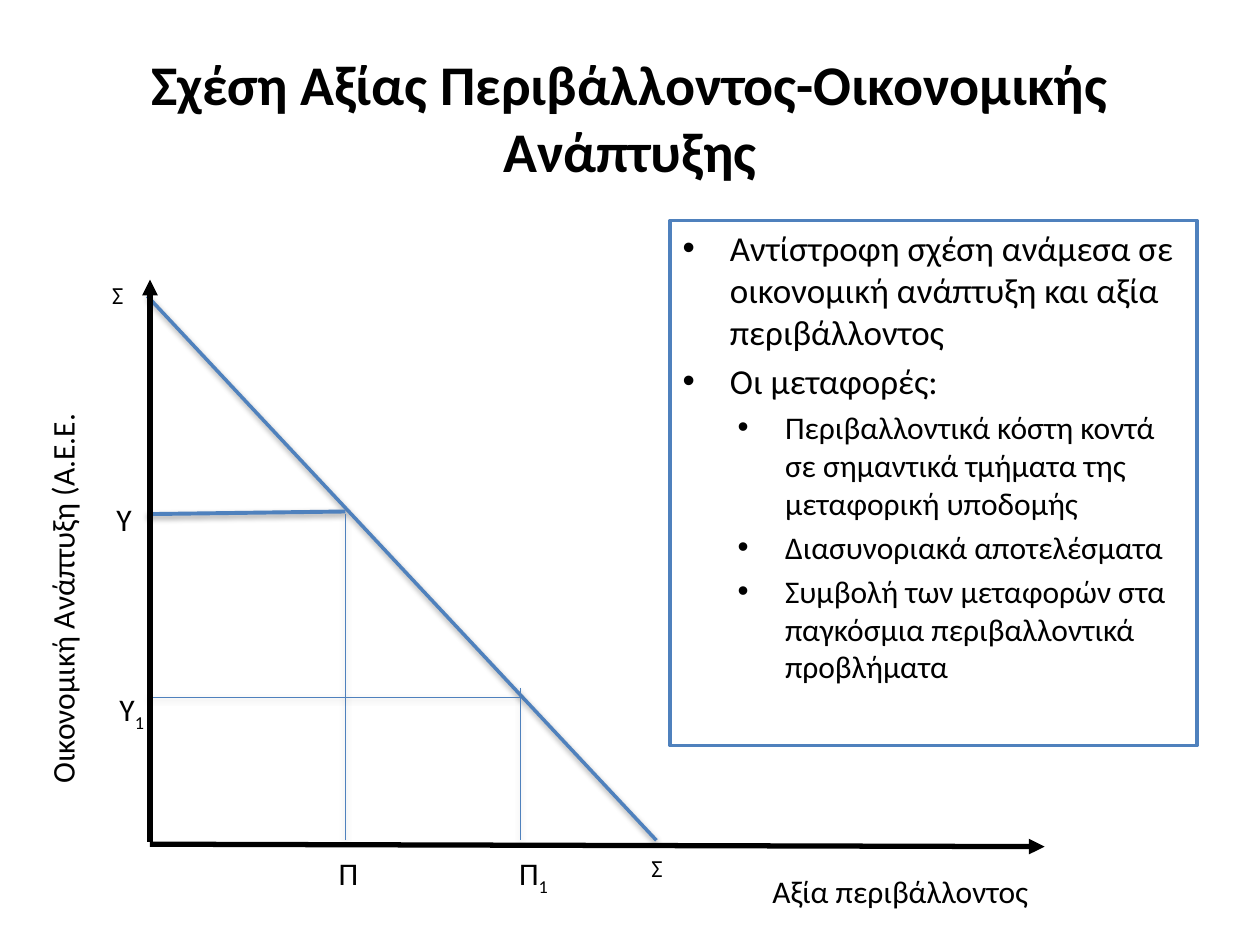
"""Build the slide on environmental value against economic development."""
from dataclasses import dataclass

from lxml.etree import SubElement
from pptx import Presentation
from pptx.dml.color import RGBColor
from pptx.enum.shapes import MSO_CONNECTOR
from pptx.enum.text import MSO_ANCHOR, MSO_AUTO_SIZE, PP_ALIGN
from pptx.oxml.ns import qn
from pptx.util import Pt


@dataclass(frozen=True)
class Theme:
    font: str = "Calibri"
    ink: RGBColor = RGBColor(0, 0, 0)
    paper: RGBColor = RGBColor(255, 255, 255)
    accent: RGBColor = RGBColor(0x4F, 0x81, 0xBD)
    title: int = 32
    point: int = 20
    label: int = 18
    end_label: int = 14


theme = Theme()


def add_run(paragraph, text, size, bold=False):
    run = paragraph.add_run()
    run.text = text
    run.font.name = theme.font
    run.font.size = Pt(size)
    run.font.bold = bold
    run.font.color.rgb = theme.ink
    return run


def add_line(start, end, color, width):
    line = slide.shapes.add_connector(
        MSO_CONNECTOR.STRAIGHT, *(Pt(value) for value in start + end))
    line.line.color.rgb = color
    line.line.width = Pt(width)
    properties = line._element.spPr
    return properties, SubElement(properties, qn("a:effectLst"))


deck = Presentation()
deck.slide_width, deck.slide_height = Pt(720), Pt(540)
slide = deck.slides.add_slide(deck.slide_layouts[5])

title = slide.shapes.title
title.left, title.top, title.width, title.height = Pt(36), Pt(21.6), Pt(648), Pt(90)
title.text_frame.word_wrap = True
title.text_frame.vertical_anchor = MSO_ANCHOR.MIDDLE
heading = title.text_frame.paragraphs[0]
heading.alignment = PP_ALIGN.CENTER
add_run(heading, "Σχέση Αξίας Περιβάλλοντος-Οικονομικής Ανάπτυξης", theme.title, True)

axis_x, base_y = 84.2, 480.2
first_x, second_x = 197.3, 297.4
curve_and_guides = [
    ((axis_x, 169.2), (375.1, base_y), 2),
    ((axis_x, 293.8), (first_x, 292.3), 2.25),
    ((first_x, 293.8), (first_x, base_y), 0.25),
    ((axis_x, 398.2), (second_x, 398.2), 0.25),
    ((second_x, 393.1), (second_x, base_y), 0.25),
]
for start, end, width in curve_and_guides:
    properties, effects = add_line(start, end, theme.accent, width)
    shadow = SubElement(effects, qn("a:outerShdw"), blurRad="40000", dist="20000",
                        dir="5400000", rotWithShape="0")
    shade = SubElement(shadow, qn("a:srgbClr"), val=str(theme.ink))
    SubElement(shade, qn("a:alpha"), val="38000")

labels = [
    ("Π", "", 172.8, 484.6, 52.6, theme.label, 0),
    ("Π", "1", 278.6, 484.6, 52.6, theme.label, 0),
    ("Υ", "1", 49, 391, 52.6, theme.label, 0),
    ("Υ", "", 44.6, 282.2, 52.6, theme.label, 0),
    ("Σ", "", 53.3, 156.2, 28.1, theme.end_label, 0),
    ("Σ", "", 361.4, 483.8, 28.1, theme.end_label, 0),
    ("Οικονομική Ανάπτυξη (A.E.E.", "", -83.5, 327.6, 238.3, theme.label, 270),
    ("Αξία περιβάλλοντος", "", 424.1, 494.6, 180.7, theme.label, 0),
]
for text, subscript, left, top, width, size, rotation in labels:
    height = 29 if size == theme.label else 24.3
    label = slide.shapes.add_textbox(Pt(left), Pt(top), Pt(width), Pt(height))
    label.rotation = rotation
    label.text_frame.word_wrap = True
    label.text_frame.auto_size = MSO_AUTO_SIZE.SHAPE_TO_FIT_TEXT
    caption = label.text_frame.paragraphs[0]
    caption.alignment = PP_ALIGN.CENTER
    add_run(caption, text, size)
    if subscript:
        add_run(caption, subscript, size).font._element.set("baseline", "-25000")

findings = slide.shapes.add_textbox(Pt(383), Pt(126), Pt(301), Pt(300))
findings.fill.solid()
findings.fill.fore_color.rgb = theme.paper
findings.line.color.rgb = theme.accent
findings.line.width = Pt(2)
findings.text_frame.word_wrap = True
points = [
    (0, "Αντίστροφη σχέση ανάμεσα σε οικονομική ανάπτυξη και αξία περιβάλλοντος"),
    (0, "Οι μεταφορές:"),
    (1, "Περιβαλλοντικά κόστη κοντά σε σημαντικά τμήματα της μεταφορική υποδομής"),
    (1, "Διασυνοριακά αποτελέσματα"),
    (1, "Συμβολή των μεταφορών στα παγκόσμια περιβαλλοντικά προβλήματα"),
]
for index, (level, text) in enumerate(points):
    frame = findings.text_frame
    point = frame.add_paragraph() if index else frame.paragraphs[0]
    size = theme.label if level else theme.point
    point.level = level
    point.space_before = Pt(0.2 * size)
    layout = point._p.get_or_add_pPr()
    layout.set("marL", str(Pt(27 + 31.5 * level)))
    layout.set("indent", str(Pt(-27)))
    SubElement(layout, qn("a:buFont"), typeface="Arial")
    SubElement(layout, qn("a:buChar"), char="•")
    add_run(point, text, size)

axes = [
    ((85.7, 481), (85.7, 159.8)),
    ((85.7, 482.4), (596.9, 483.8)),
]
for origin, tip in axes:
    properties, effects = add_line(origin, tip, theme.ink, 3)
    SubElement(properties.find(qn("a:ln")), qn("a:tailEnd"), type="triangle")

deck.save("out.pptx")
